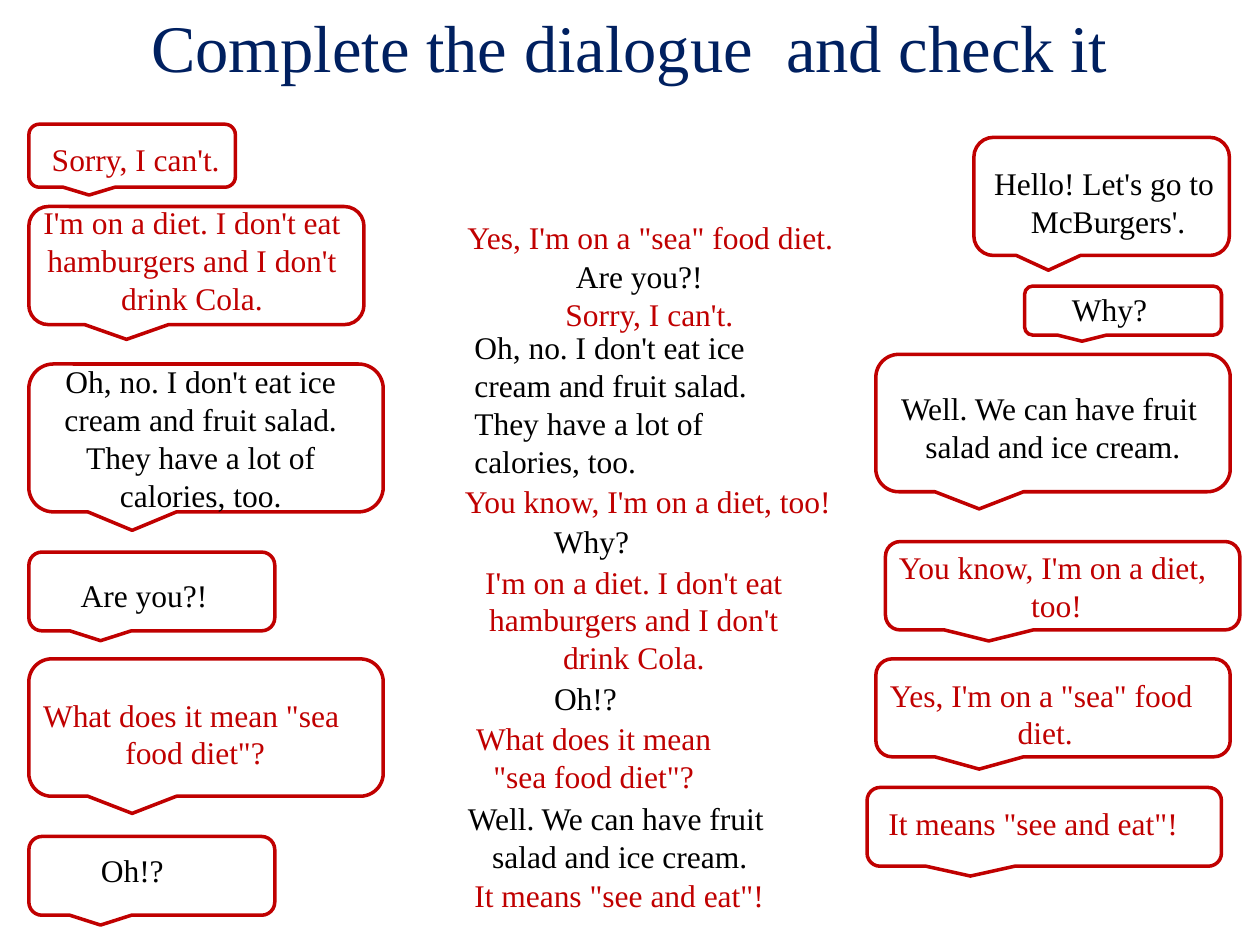
from dataclasses import dataclass
from typing import Optional

from pptx import Presentation, dml, util as u
from pptx.dml import color
from pptx.enum import shapes, text

BLACK, RED, NAVY = "000000", "C00000", "002060"
LEFT, CENTER = text.PP_ALIGN.LEFT, text.PP_ALIGN.CENTER


@dataclass(frozen=True)
class Frame:
    left: float
    top: float
    width: float
    height: float


@dataclass(frozen=True)
class Phrase:
    wording: str
    colour: str = BLACK
    align: text.PP_ALIGN = LEFT
    size: float = 18


@dataclass(frozen=True)
class Caption:
    phrase: Phrase
    frame: Frame
    wrap: bool = True


@dataclass(frozen=True)
class Bubble:
    outline: Frame
    caption: Caption


def rgb(value: str) -> color.RGBColor:
    return color.RGBColor.from_string(value)


def lengths(frame: Frame) -> list[u.Length]:
    return [u.Pt(n) for n in (frame.left, frame.top, frame.width, frame.height)]


def draw_caption(page, caption: Caption) -> None:
    phrase = caption.phrase
    box = page.shapes.add_textbox(*lengths(caption.frame)).text_frame
    box.word_wrap = caption.wrap
    box.auto_size = text.MSO_AUTO_SIZE.SHAPE_TO_FIT_TEXT
    font_format = {"name": "Times New Roman", "size": u.Pt(phrase.size)}
    for index, line in enumerate(phrase.wording.split("\n")):
        para = box.add_paragraph() if index else box.paragraphs[0]
        para.alignment = phrase.align
        span = para.add_run()
        span.text = line
        for name, value in font_format.items():
            setattr(span.font, name, value)
        span.font.color.rgb = rgb(phrase.colour)


def draw_bubble(page, bubble: Bubble) -> None:
    callout = page.shapes.add_shape(
        shapes.MSO_SHAPE.ROUNDED_RECTANGULAR_CALLOUT, *lengths(bubble.outline))
    callout.shadow.inherit = False
    callout.fill.background()
    callout.line.color.rgb = rgb(RED)
    callout.line.width = u.Pt(2)
    draw_caption(page, bubble.caption)


# Phrases that appear both in a bubble and in the finished dialogue
SORRY = Phrase("Sorry, I can't.", RED)
DIET = Phrase("I'm on a diet. I don't eat hamburgers and I don't drink Cola.", RED, CENTER)
ARE_YOU = Phrase("Are you?!")
OH = Phrase("Oh!?")
WHY = Phrase("Why?")
FRUIT = Phrase("Well. We can have fruit \nsalad and ice cream.", BLACK, CENTER)
MEANS = Phrase("It means \"see and eat\"!", RED)
NO_ICE = "Oh, no. I don't eat ice cream and fruit salad. They have a lot of calories, too."

TITLE = Caption(Phrase("Complete the dialogue  and check it", NAVY, CENTER, 38),
                Frame(0, 0, 720, 53))

LEFT_BUBBLES = [
    Bubble(Frame(16.5, 71, 118, 36),
           Caption(SORRY, Frame(22.5, 76.5, 124, 29))),
    Bubble(Frame(16.5, 118, 191.5, 67.5),
           Caption(DIET, Frame(11.5, 112.5, 196.5, 72.5))),
    Bubble(Frame(16.5, 208, 202.5, 84.5),
           Caption(Phrase(NO_ICE, BLACK, CENTER), Frame(16.5, 203.5, 196.5, 94.5))),
    Bubble(Frame(16.5, 315.5, 140.5, 45),
           Caption(ARE_YOU, Frame(39, 325.5, 92, 29), wrap=False)),
    Bubble(Frame(16.5, 376.5, 202.5, 78.5),
           Caption(Phrase("What does it mean \"sea \nfood diet\"?", RED, CENTER),
                   Frame(16.5, 394, 190, 51), wrap=False)),
    Bubble(Frame(16.5, 478, 140.5, 45),
           Caption(OH, Frame(50.5, 483, 51, 29), wrap=False)),
]

RIGHT_BUBBLES = [
    Bubble(Frame(556.5, 78.5, 146, 67.5),
           Caption(Phrase("Hello! Let's go to \nMcBurgers'.", BLACK, CENTER),
                   Frame(551.5, 90, 163.5, 51))),
    Bubble(Frame(585.5, 163.5, 112.5, 28),
           Caption(WHY, Frame(605.5, 162, 58.5, 29), wrap=False)),
    Bubble(Frame(500.5, 202.5, 202.5, 78.5),
           Caption(FRUIT, Frame(500.5, 219, 202.5, 51))),
    Bubble(Frame(506, 309.5, 202.5, 50.5),
           Caption(Phrase("You know, I'm on a diet, \ntoo!", RED, CENTER),
                   Frame(505.5, 309.5, 196.5, 51), wrap=False)),
    Bubble(Frame(500.5, 376.5, 202.5, 56),
           Caption(Phrase("Yes, I'm on a \"sea\" food \ndiet.", RED, CENTER),
                   Frame(500.5, 382.5, 193.5, 51), wrap=False)),
    Bubble(Frame(495.5, 450, 202.5, 45),
           Caption(MEANS, Frame(500.5, 456, 182, 29), wrap=False)),
]

DIALOGUE = [
    Caption(Phrase("Yes, I'm on a \"sea\" food diet.", RED),
            Frame(260, 121, 226, 29), wrap=False),
    Caption(ARE_YOU, Frame(322, 143.5, 92, 29), wrap=False),
    Caption(SORRY, Frame(316, 165, 116, 29), wrap=False),
    Caption(Phrase(NO_ICE), Frame(264, 184, 191.5, 94.5)),
    Caption(Phrase("You know, I'm on a diet, too!", RED),
            Frame(258.5, 272, 226, 29), wrap=False),
    Caption(WHY, Frame(309.5, 295, 58.5, 29), wrap=False),
    Caption(DIET, Frame(264, 318, 196.5, 72.5)),
    Caption(OH, Frame(309.5, 384.5, 62, 29)),
    Caption(Phrase("What does it mean \"sea food diet\"?", RED, CENTER),
            Frame(253.5, 407.5, 171.5, 51)),
    Caption(FRUIT, Frame(258.5, 453, 191.5, 51)),
    Caption(MEANS, Frame(264, 497, 208, 29)),
]


def main() -> None:
    deck = Presentation()
    deck.slide_width, deck.slide_height = u.Pt(720), u.Pt(540)
    page = deck.slides.add_slide(deck.slide_layouts[6])

    # Title
    draw_caption(page, TITLE)

    # Speech bubbles at both sides
    for bubble in LEFT_BUBBLES + RIGHT_BUBBLES:
        draw_bubble(page, bubble)

    # Dialogue down the middle
    for caption in DIALOGUE:
        draw_caption(page, caption)

    deck.save("out.pptx")


if __name__ == "__main__":
    main()
